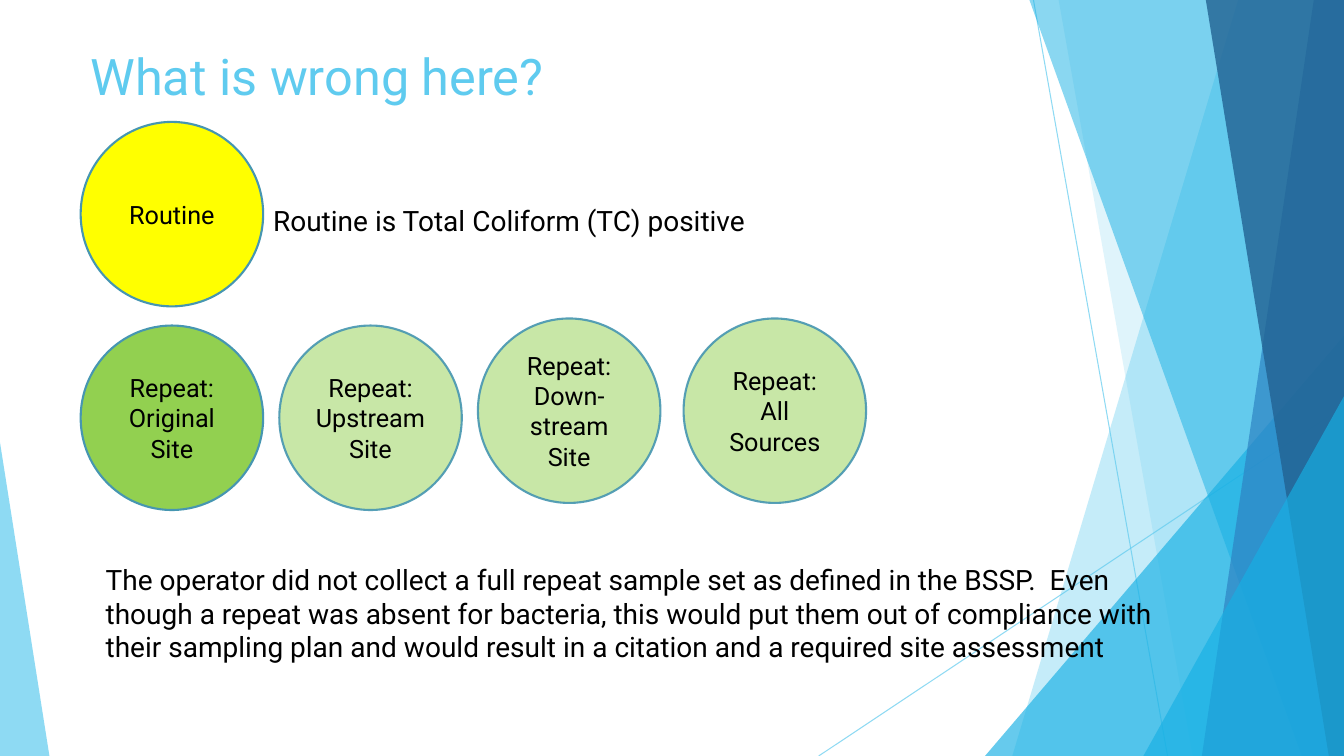
import pptx
import pptx.util
import pptx.dml.color
import pptx.enum.shapes
import pptx.enum.text
import pptx.oxml

W, H = 13.33, 7.5
FONT = "Roboto"
SKY, CYAN, BLUE, NAVY = "5FCBEF", "17B0E4", "2E83C3", "226292"
OUTLINE, GREEN, YELLOW, BLACK = "4696B1", "92D050", "FFFF00", "000000"
LEFT, PITCH = 0.8, 1.97  # circle grid: first column and column step
CIRCLE_W, CIRCLE_H = 1.81, 1.83
CIRCLE_INSET = 0.07  # narrow side margins keep the longest word on one line
NS = "http://schemas.openxmlformats.org/drawingml/2006/main"
SHAPE = pptx.enum.shapes.MSO_SHAPE
inch = pptx.util.Inches


def paint(fmt, color, alpha=100):
    """Give a fill a solid colour with an opacity in percent."""
    fmt.solid()
    fmt.fore_color.rgb = pptx.dml.color.RGBColor.from_string(color)
    if alpha < 100:
        rgb = fmt._xPr.find(f".//{{{NS}}}solidFill/{{{NS}}}srgbClr")
        rgb.append(pptx.oxml.parse_xml(f'<a:alpha xmlns:a="{NS}" val="{alpha * 1000}"/>'))


def write(tf, lines, size, color=BLACK, align=None):
    tf.word_wrap = True
    for i, line in enumerate(lines):
        p = tf.paragraphs[0] if i == 0 else tf.add_paragraph()
        p.text = line
        p.alignment = align
        p.font.size = pptx.util.Pt(size)
        p.font.name = FONT
        p.font.color.rgb = pptx.dml.color.RGBColor.from_string(color)


def add_text(s, box, text, size, color=BLACK):
    tf = s.shapes.add_textbox(*map(inch, box)).text_frame
    write(tf, [text], size, color)


def add_ray(s, start, end):
    sp = s.shapes.add_connector(
        pptx.enum.shapes.MSO_CONNECTOR.STRAIGHT, *map(inch, start + end))
    sp.line.width = pptx.util.Pt(0.75)
    paint(sp.line.fill, SKY, 70)
    sp._element.spPr.append(pptx.oxml.parse_xml(f'<a:effectLst xmlns:a="{NS}"/>'))


def finish_facet(sp, color, alpha):
    sp.shadow.inherit = False
    sp.line.fill.background()
    paint(sp.fill, color, alpha)


def add_band(s, top_x, bottom_x, color, alpha):
    """Full-height band from a slanted left side to the right slide edge."""
    corners = [(top_x, 0), (W, 0), (W, H), (bottom_x, H)]
    points = [(inch(x), inch(y)) for x, y in corners]
    builder = s.shapes.build_freeform(*points[0])
    builder.add_line_segments(points[1:], close=True)
    finish_facet(builder.convert_to_shape(), color, alpha)


def add_corner(s, left, top, width, peak, color, alpha):
    """Triangle that stands on the bottom edge of the slide."""
    sp = s.shapes.add_shape(
        SHAPE.ISOSCELES_TRIANGLE, *map(inch, (left, top, width, H - top)))
    sp.adjustments[0] = peak
    finish_facet(sp, color, alpha)


def add_circle(s, left, top, lines, color, alpha=100, line_alpha=100):
    sp = s.shapes.add_shape(
        SHAPE.FLOWCHART_CONNECTOR, *map(inch, (left, top, CIRCLE_W, CIRCLE_H)))
    sp.shadow.inherit = False
    paint(sp.fill, color, alpha)
    sp.line.width = pptx.util.Pt(1.5)
    paint(sp.line.fill, OUTLINE, line_alpha)
    tf = sp.text_frame
    tf.margin_left = tf.margin_right = inch(CIRCLE_INSET)
    tf.vertical_anchor = pptx.enum.text.MSO_ANCHOR.MIDDLE
    write(tf, lines, 18, align=pptx.enum.text.PP_ALIGN.CENTER)


def add_backdrop(s):
    add_ray(s, (10.25, 0), (11.58, H))
    add_ray(s, (W, 4.03), (8.12, H))
    add_band(s, 12.28, 10.04, SKY, 36)
    add_band(s, 10.5, 11.83, SKY, 20)
    add_corner(s, 9.77, 3.33, W - 9.77, 1, CYAN, 66)
    add_band(s, 10.21, 12.91, CYAN, 50)
    add_band(s, 13.03, 11.92, BLUE, 70)
    add_band(s, 11.96, 13.18, NAVY, 80)
    add_corner(s, 11.34, 3.93, W - 11.34, 1, CYAN, 66)
    add_corner(s, 0, 4.39, 0.49, 0, SKY, 70)


def main():
    prs = pptx.Presentation()
    prs.slide_width, prs.slide_height = inch(W), inch(H)
    s = prs.slides.add_slide(prs.slide_layouts[6])
    add_backdrop(s)

    # Title
    add_text(s, (LEFT, 0.4, 9.4, 0.8), "What is wrong here?", 36, SKY)

    # Routine sample
    add_circle(s, LEFT, 1.21, ["Routine"], YELLOW)
    add_text(s, (LEFT + CIRCLE_W, 1.97, 9.4, 0.48),
             "Routine is Total Coliform (TC) positive", 20)

    # Repeat samples: the first is solid, the others are faded
    add_circle(s, LEFT, 3.23, ["Repeat:", "Original Site"], GREEN)
    faded = [("Upstream Site", 0, 3.23), ("Down-stream Site", 0, 3.16),
             ("All Sources", 0.07, 3.16)]
    for column, (site, shift, top) in enumerate(faded, 1):
        add_circle(s, LEFT + column * PITCH + shift, top,
                   ["Repeat:", site], GREEN, 50, 89)

    # Explanation
    add_text(s, (0.95, 5.53, 10.73, 1.58),
             "The operator did not collect a full repeat sample set as defined in "
             "the BSSP.  Even though a repeat was absent for bacteria, this would "
             "put them out of compliance with their sampling plan and would result "
             "in a citation and a required site assessment", 20)

    prs.save("out.pptx")


if __name__ == "__main__":
    main()
